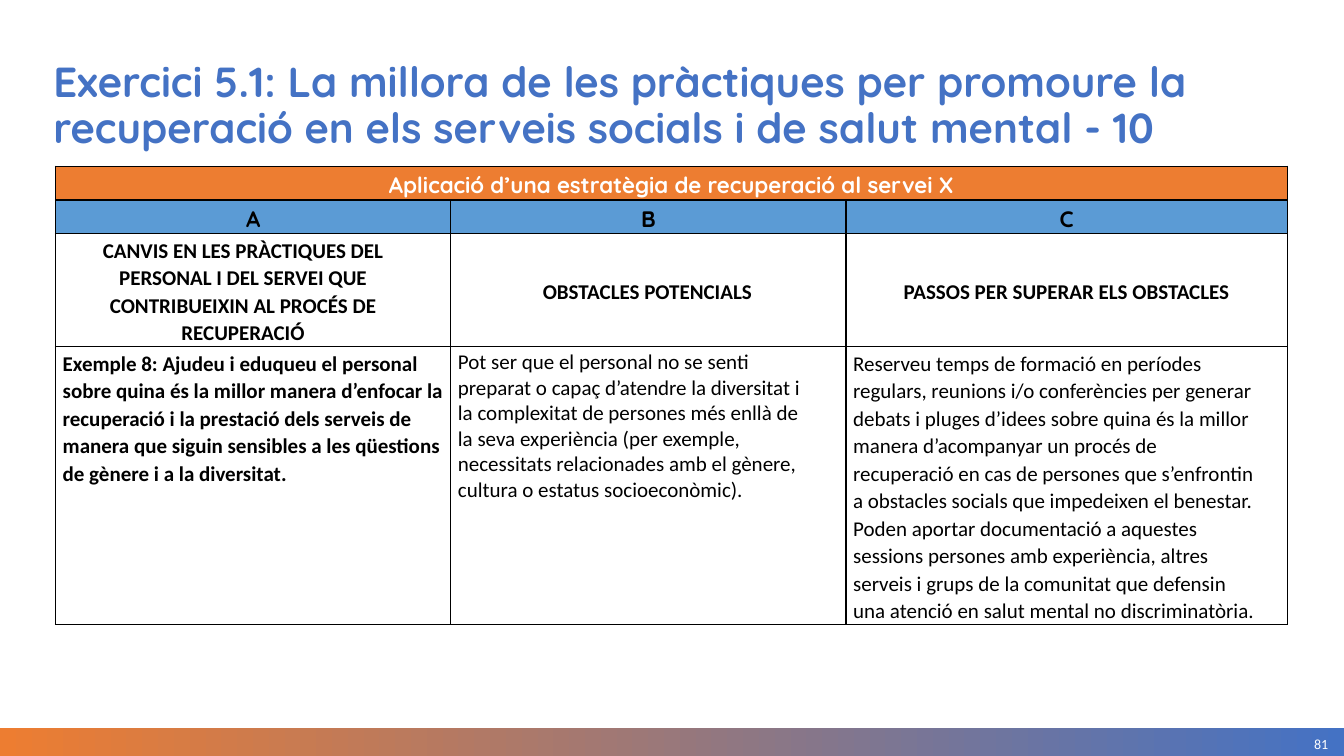
from pptx import Presentation
from pptx.dml.color import RGBColor
from pptx.enum.shapes import MSO_SHAPE as Shape
from pptx.enum.text import MSO_ANCHOR as Anchor, MSO_AUTO_SIZE as Fit, PP_ALIGN as Align
from pptx.oxml.ns import qn
from pptx.util import Cm, Pt
from lxml.etree import SubElement as Sub

BLUE = RGBColor(0x44, 0x72, 0xC4)
ORANGE = RGBColor(0xED, 0x7D, 0x31)
SKY = RGBColor(0x5B, 0x9B, 0xD5)
BLACK = RGBColor(0, 0, 0)
WHITE = RGBColor(0xFF, 0xFF, 0xFF)
HEAD = "Quicksand"
BODY = "Calibri"

TITLE = ("Exercici 5.1: La millora de les pràctiques per promoure la "
         "recuperació en els serveis socials i de salut mental - 10")
BANNER = "Aplicació d’una estratègia de recuperació al servei X"
TOPICS = [
    "CANVIS EN LES PRÀCTIQUES DEL PERSONAL I DEL SERVEI QUE "
    "CONTRIBUEIXIN AL PROCÉS DE RECUPERACIÓ",
    "OBSTACLES POTENCIALS",
    "PASSOS PER SUPERAR ELS OBSTACLES",
]
ANSWERS = [
    "Exemple 8: Ajudeu i eduqueu el personal sobre quina és la millor manera "
    "d’enfocar la recuperació i la prestació dels serveis de manera que siguin "
    "sensibles a les qüestions de gènere i a la diversitat.",
    "Pot ser que el personal no se senti preparat o capaç d’atendre la "
    "diversitat i la complexitat de persones més enllà de la seva experiència "
    "(per exemple, necessitats relacionades amb el gènere, cultura o estatus "
    "socioeconòmic).",
    "Reserveu temps de formació en períodes regulars, reunions i/o conferències "
    "per generar debats i pluges d’idees sobre quina és la millor manera "
    "d’acompanyar un procés de recuperació en cas de persones que s’enfrontin a "
    "obstacles socials que impedeixen el benestar. Poden aportar documentació a "
    "aquestes sessions persones amb experiència, altres serveis i grups de la "
    "comunitat que defensin una atenció en salut mental no discriminatòria.",
]
TOPIC_PADS = [0.69, 0.23, 0.18]
ANSWER_PADS = [0.13, 1.02, 0.69]
WIDTHS = [9.96, 9.96, 11.12]
HEIGHTS = [0.85, 0.84, 2.85, 7]


def style(para, name, size, color, bold=False, align=Align.LEFT, space=1.0):
    para.alignment = align
    para.line_spacing = space
    font = para.font
    font.name, font.size, font.bold = name, Pt(size), bold
    font.color.rgb = color


def add_title(slide):
    title = slide.shapes.title
    title.left, title.top = Cm(1.09), Cm(1.42)
    title.width, title.height = Cm(31.93), Cm(1.17)
    frame = title.text_frame
    frame.text = TITLE
    frame.word_wrap = True
    frame.auto_size = Fit.NONE
    frame.vertical_anchor = Anchor.TOP
    style(frame.paragraphs[0], HEAD, 30, BLUE, True, space=0.9)


def add_footer(slide):
    bar = slide.shapes.add_shape(Shape.RECTANGLE, 0, Cm(18.34), Cm(33.87), Cm(0.71))
    bar.shadow.inherit = False
    bar.line.fill.background()
    bar.fill.gradient()
    bar.fill.gradient_angle = 0
    for stop, color, place in zip(bar.fill.gradient_stops, (ORANGE, BLUE), (0, 1)):
        stop.color.rgb = color
        stop.position = place

    box = slide.shapes.add_textbox(Cm(28.9), Cm(18.44), Cm(4.57), Cm(0.61))
    frame = box.text_frame
    frame.text = "81"
    frame.word_wrap = True
    frame.vertical_anchor = Anchor.MIDDLE
    frame.margin_left = frame.margin_right = 0
    frame.margin_top = frame.margin_bottom = 0
    style(frame.paragraphs[0], BODY, 10, WHITE, align=Align.RIGHT)


def add_border(cell):
    props = cell._tc.get_or_add_tcPr()
    for side in ("a:lnL", "a:lnR", "a:lnT", "a:lnB"):
        line = Sub(props, qn(side), w=str(Pt(1)))
        fill = Sub(line, qn("a:solidFill"))
        Sub(fill, qn("a:srgbClr"), val=str(BLACK))


def fill_head(cell, text, back, color):
    cell.text = text
    cell.fill.solid()
    cell.fill.fore_color.rgb = back
    cell.vertical_anchor = Anchor.MIDDLE
    cell.margin_left = cell.margin_right = Cm(0.23)
    cell.margin_top = cell.margin_bottom = 0
    style(cell.text_frame.paragraphs[0], HEAD, 16, color, True, Align.CENTER, 1.15)


def fill_body(cell, text, pad, bold, align, anchor, space=1.07):
    cell.text = text
    cell.fill.background()
    cell.vertical_anchor = anchor
    cell.margin_left, cell.margin_right = Cm(0.18), Cm(pad)
    cell.margin_top, cell.margin_bottom = Cm(0.08), 0
    style(cell.text_frame.paragraphs[0], BODY, 15, BLACK, bold, align, space)


def add_grid(slide):
    frame = slide.shapes.add_table(len(HEIGHTS), len(WIDTHS), Cm(1.4), Cm(4.19),
                                   Cm(sum(WIDTHS)), Cm(sum(HEIGHTS)))
    table = frame.table
    table.horz_banding = False
    for col, width in zip(table.columns, WIDTHS):
        col.width = Cm(width)
    for row, height in zip(table.rows, HEIGHTS):
        row.height = Cm(height)
    for cell in table.iter_cells():
        add_border(cell)

    table.cell(0, 0).merge(table.cell(0, 2))
    fill_head(table.cell(0, 0), BANNER, ORANGE, WHITE)
    for col, letter in enumerate("ABC"):
        fill_head(table.cell(1, col), letter, SKY, BLACK)
        fill_body(table.cell(2, col), TOPICS[col], TOPIC_PADS[col], True,
                  Align.CENTER, Anchor.MIDDLE)
        fill_body(table.cell(3, col), ANSWERS[col], ANSWER_PADS[col], col == 0,
                  Align.LEFT, Anchor.TOP, 0.99 if col == 1 else 1.07)


def main():
    deck = Presentation()
    deck.slide_width, deck.slide_height = Cm(33.87), Cm(19.05)
    slide = deck.slides.add_slide(deck.slide_layouts[5])
    add_footer(slide)
    add_grid(slide)
    add_title(slide)
    deck.save("out.pptx")


if __name__ == "__main__":
    main()
